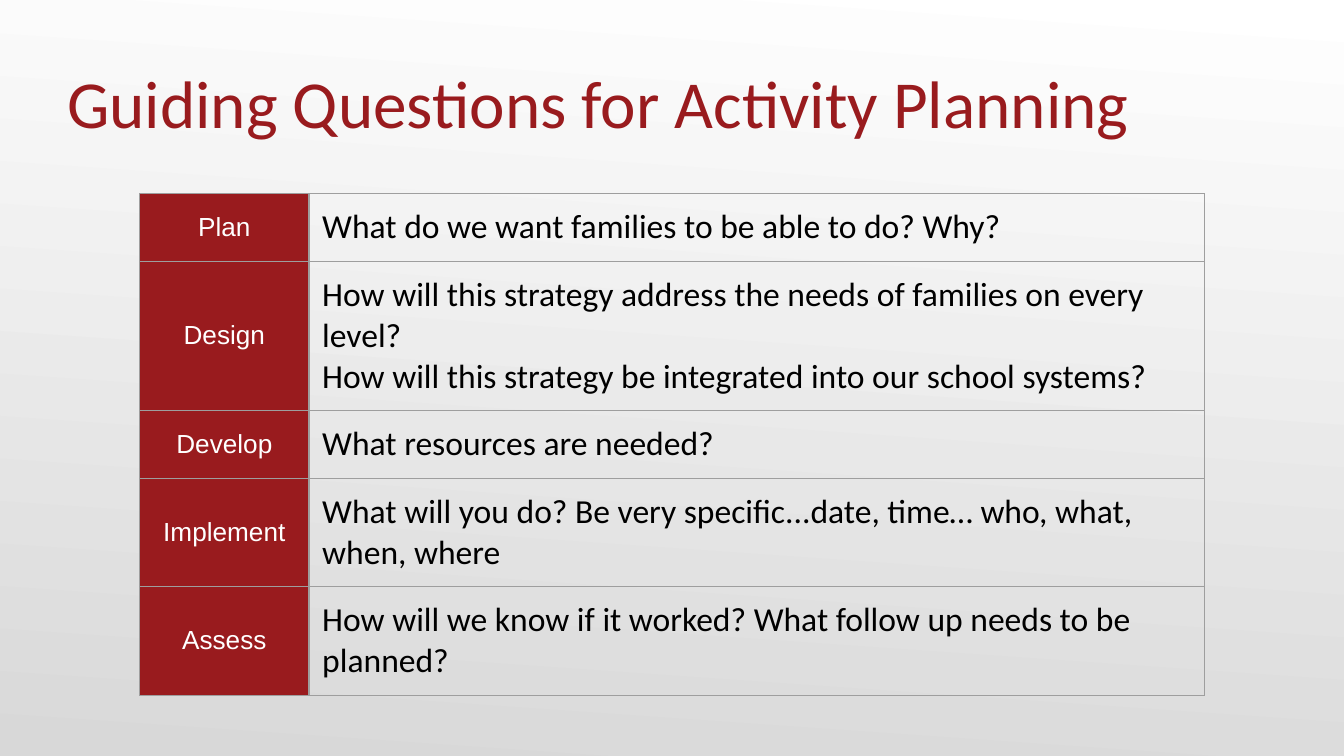
from lxml.etree import SubElement
from pptx import Presentation
from pptx.dml.color import RGBColor
from pptx.enum.text import MSO_ANCHOR, PP_ALIGN
from pptx.oxml.ns import qn
from pptx.util import Cm, Pt

# Content: stage, questions, lines of text the row holds
TITLE = "Guiding Questions for Activity Planning"
STAGES = [
    ("Plan", ["What do we want families to be able to do? Why?"], 1),
    ("Design", ["How will this strategy address the needs of families on every level?",
                "How will this strategy be integrated into our school systems?"], 3),
    ("Develop", ["What resources are needed?"], 1),
    ("Implement", ["What will you do? Be very specific...date, time… who, what, when, where"], 2),
    ("Assess", ["How will we know if it worked? What follow up needs to be planned?"], 2),
]
RED, WHITE, BLACK, GREY = "991B1E", "FFFFFF", "000000", "9E9E9E"
BACKGROUND = [WHITE, "D8D8D8"]
COLUMN_WIDTHS = [3.2, 16.92]
CELL_MARGIN, LINE_HEIGHT = 0.25, 0.76


def color(value):
    return RGBColor.from_string(value)


def write(frame, lines, size, font, ink, align=PP_ALIGN.LEFT):
    for index, line in enumerate(lines):
        para = frame.paragraphs[0] if index == 0 else frame.add_paragraph()
        para.alignment = align
        span = para.add_run()
        span.text = line
        span.font.size = Pt(size)
        span.font.name = font
        span.font.color.rgb = color(ink)


def add_borders(cell):
    properties = cell._tc.get_or_add_tcPr()
    for index, side in enumerate(("lnL", "lnR", "lnT", "lnB")):
        line = properties.makeelement(qn(f"a:{side}"), {"w": str(Pt(0.75))})
        fill = SubElement(line, qn("a:solidFill"))
        SubElement(fill, qn("a:srgbClr"), val=GREY)
        properties.insert(index, line)


def format_cell(cell, anchor):
    cell.margin_left = cell.margin_right = Cm(CELL_MARGIN)
    cell.margin_top = cell.margin_bottom = Cm(CELL_MARGIN)
    cell.vertical_anchor = anchor
    add_borders(cell)


# Page and background
deck = Presentation()
deck.slide_width, deck.slide_height = Cm(25.4), Cm(14.29)
page = deck.slides.add_slide(deck.slide_layouts[5])
backdrop = page.background.fill
backdrop.gradient()
backdrop.gradient_angle = 360 - 94
for stop, position, shade in zip(backdrop.gradient_stops, (0, 1), BACKGROUND):
    stop.position = position
    stop.color.rgb = color(shade)

# Title
title = page.shapes.title
title.left, title.top, title.width, title.height = Cm(1.27), Cm(0.3), Cm(22.86), Cm(2.39)
frame = title.text_frame
frame.margin_left = frame.margin_right = frame.margin_bottom = 0
frame.margin_top = Cm(0.13)
frame.vertical_anchor = MSO_ANCHOR.BOTTOM
write(frame, [TITLE], 36, "Calibri", RED)

# Table, each row as tall as its lines
heights = [2 * CELL_MARGIN + LINE_HEIGHT * count for _, _, count in STAGES]
table = page.shapes.add_table(len(STAGES), len(COLUMN_WIDTHS), Cm(2.64), Cm(3.66),
                              Cm(sum(COLUMN_WIDTHS)), Cm(sum(heights))).table
table.first_row = table.horz_banding = False
for column, width in zip(table.columns, COLUMN_WIDTHS):
    column.width = Cm(width)
for row, height, (stage, questions, _) in zip(table.rows, heights, STAGES):
    row.height = Cm(height)
    label, answer = row.cells
    label.fill.solid()
    label.fill.fore_color.rgb = color(RED)
    answer.fill.background()
    format_cell(label, MSO_ANCHOR.MIDDLE)
    format_cell(answer, MSO_ANCHOR.TOP)
    write(label.text_frame, [stage], 14, "Arial", WHITE, PP_ALIGN.CENTER)
    write(answer.text_frame, questions, 18, "Calibri", BLACK)

deck.save("out.pptx")
